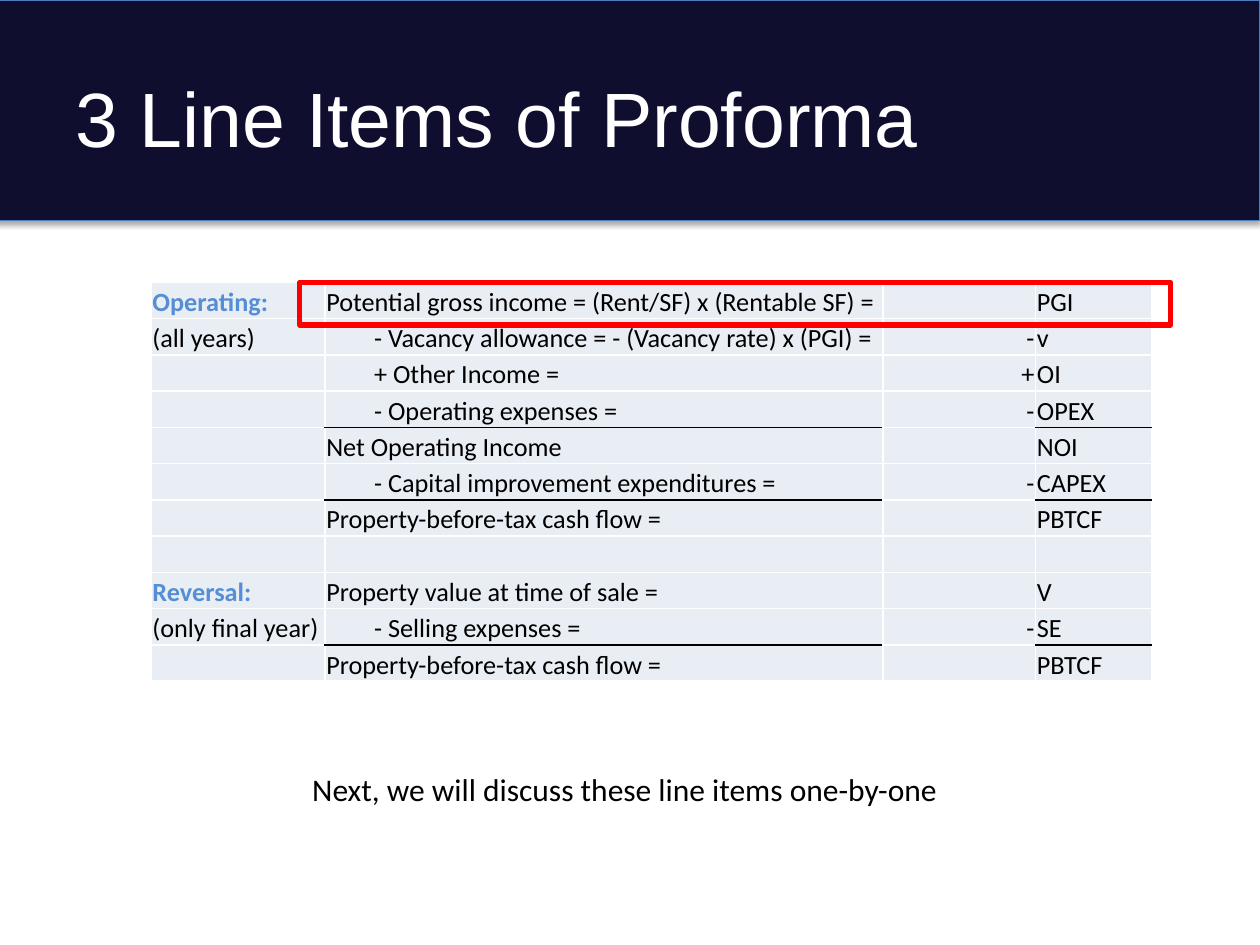
from dataclasses import dataclass

import lxml.etree
import pptx
import pptx.dml.color
import pptx.enum.shapes
import pptx.enum.text
import pptx.oxml.ns
import pptx.util

Inches = pptx.util.Inches
Pt = pptx.util.Pt
ALIGN = pptx.enum.text.PP_ALIGN
ANCHOR = pptx.enum.text.MSO_ANCHOR


@dataclass(frozen=True)
class Theme:
    navy: str = "100E2F"
    band_line: str = "4B7EBC"
    heading: str = "558ED5"
    cell: str = "E9EDF4"
    white: str = "FFFFFF"
    black: str = "000000"
    red: str = "FF0000"
    title_font: str = "Arial"
    body_font: str = "Calibri"
    title_size: int = 44
    note_size: int = 18
    table_size: int = 15


def rgb(value):
    return pptx.dml.color.RGBColor.from_string(value)


def add_xml(parent, tag, **attrs):
    return lxml.etree.SubElement(
        parent, pptx.oxml.ns.qn(tag), {k: str(v) for k, v in attrs.items()})


def write(tf, text, *, size, font, color, bold=False, align=ALIGN.LEFT, indent=0):
    p = tf.paragraphs[0]
    p.alignment = align
    if indent:
        p._p.get_or_add_pPr().set("marL", str(Inches(indent)))
    if not text:
        # An empty cell still takes its row height from the end mark.
        p._p.get_or_add_endParaRPr().set("sz", str(size * 100))
        return
    r = p.add_run()
    r.text = text
    r.font.size = Pt(size)
    r.font.name = font
    r.font.bold = bold
    r.font.color.rgb = rgb(color)


class SlideBuilder:
    def __init__(self, s, theme):
        self.s = s
        self.theme = theme

    def rect(self, x, y, w, h, *, line, width, fill=None):
        sp = self.s.shapes.add_shape(
            pptx.enum.shapes.MSO_SHAPE.RECTANGLE,
            Inches(x), Inches(y), Inches(w), Inches(h))
        sp.shadow.inherit = False
        if fill:
            sp.fill.solid()
            sp.fill.fore_color.rgb = rgb(fill)
        else:
            sp.fill.background()
        sp.line.color.rgb = rgb(line)
        sp.line.width = Pt(width)
        return sp

    def drop_shadow(self, sp, *, blur, distance, opacity):
        effects = sp._element.spPr.find(pptx.oxml.ns.qn("a:effectLst"))
        shadow = add_xml(effects, "a:outerShdw", blurRad=Pt(blur), dist=Pt(distance),
                         dir=90 * 60000, rotWithShape=0)
        color = add_xml(shadow, "a:srgbClr", val=self.theme.black)
        add_xml(color, "a:alpha", val=opacity * 1000)

    def text(self, x, y, w, h, text, *, wrap=True, anchor=ANCHOR.TOP, **style):
        tf = self.s.shapes.add_textbox(
            Inches(x), Inches(y), Inches(w), Inches(h)).text_frame
        tf.word_wrap = wrap
        tf.vertical_anchor = anchor
        write(tf, text, **style)

    def borders(self, cell, **colors):
        """Draw the cell's edges, white unless a side (L, R, T, B) is given."""
        tc_pr = cell._tc.get_or_add_tcPr()
        for side in "LRTB":
            ln = add_xml(tc_pr, f"a:ln{side}", w=Pt(1))
            fill = add_xml(ln, "a:solidFill")
            add_xml(fill, "a:srgbClr", val=colors.get(side, self.theme.white))

    def cell(self, cell, text, *, edges, **style):
        self.borders(cell, **edges)
        cell.fill.solid()
        cell.fill.fore_color.rgb = rgb(self.theme.cell)
        cell.margin_left = cell.margin_right = cell.margin_top = Inches(0.01)
        cell.margin_bottom = 0
        cell.vertical_anchor = ANCHOR.BOTTOM
        write(cell.text_frame, text, size=self.theme.table_size,
              font=self.theme.body_font, **style)

    def proforma(self, x, y, h, widths, rows):
        """Signed items are indented; a rule stands above each total."""
        t = self.theme
        table = self.s.shapes.add_table(
            len(rows), len(widths), Inches(x), Inches(y),
            Inches(sum(widths)), Inches(h)).table
        table.first_row = table.horz_banding = False
        for col, width in zip(table.columns, widths):
            col.width = Inches(width)
        for row in table.rows:
            row.height = Inches(h / len(rows))
        totals = [i for i, row in enumerate(rows) if i and rows[i - 1][2] == "-"
                  and not row[2]]
        for i, row in enumerate(rows):
            for j, text in enumerate(row):
                edges = {}
                if j in (1, 3):
                    if i in totals:
                        edges["T"] = t.black
                    if i + 1 in totals:
                        edges["B"] = t.black
                heading = text.endswith(":")
                self.cell(table.cell(i, j), text, edges=edges, bold=heading,
                          color=t.heading if heading else t.black,
                          align=ALIGN.RIGHT if j == 2 else ALIGN.LEFT,
                          indent=0.38 if j == 1 and row[2] else 0)


ROWS = [
    ("Operating:", "Potential gross income = (Rent/SF) x (Rentable SF) =", "", "PGI"),
    ("(all years)", "- Vacancy allowance = - (Vacancy rate) x (PGI) =", "-", "v"),
    ("", "+ Other Income =", "+", "OI"),
    ("", "- Operating expenses =", "-", "OPEX"),
    ("", "Net Operating Income", "", "NOI"),
    ("", "- Capital improvement expenditures =", "-", "CAPEX"),
    ("", "Property-before-tax cash flow =", "", "PBTCF"),
    ("", "", "", ""),
    ("Reversal:", "Property value at time of sale =", "", "V"),
    ("(only final year)", "- Selling expenses =", "-", "SE"),
    ("", "Property-before-tax cash flow =", "", "PBTCF"),
]


def main():
    prs = pptx.Presentation()
    prs.slide_width, prs.slide_height = Inches(10), Inches(7.5)
    t = Theme()
    b = SlideBuilder(prs.slides.add_slide(prs.slide_layouts[6]), t)

    band = b.rect(-0.04, 0, 10.04, 1.75, fill=t.navy, line=t.band_line, width=0.75)
    b.drop_shadow(band, blur=3.1, distance=1.8, opacity=35)
    b.text(0.5, 0.3, 9, 1.25, "3 Line Items of Proforma", anchor=ANCHOR.MIDDLE,
           size=t.title_size, font=t.title_font, color=t.white)
    b.proforma(1.2, 2.24, 3.17, (1.38, 4.43, 1.21, 0.92), ROWS)
    b.text(2.38, 6.06, 5.23, 0.4, "Next, we will discuss these line items one-by-one",
           wrap=False, size=t.note_size, font=t.body_font, color=t.black)
    b.rect(2.38, 2.24, 6.91, 0.34, line=t.red, width=3)

    prs.save("out.pptx")


if __name__ == "__main__":
    main()
